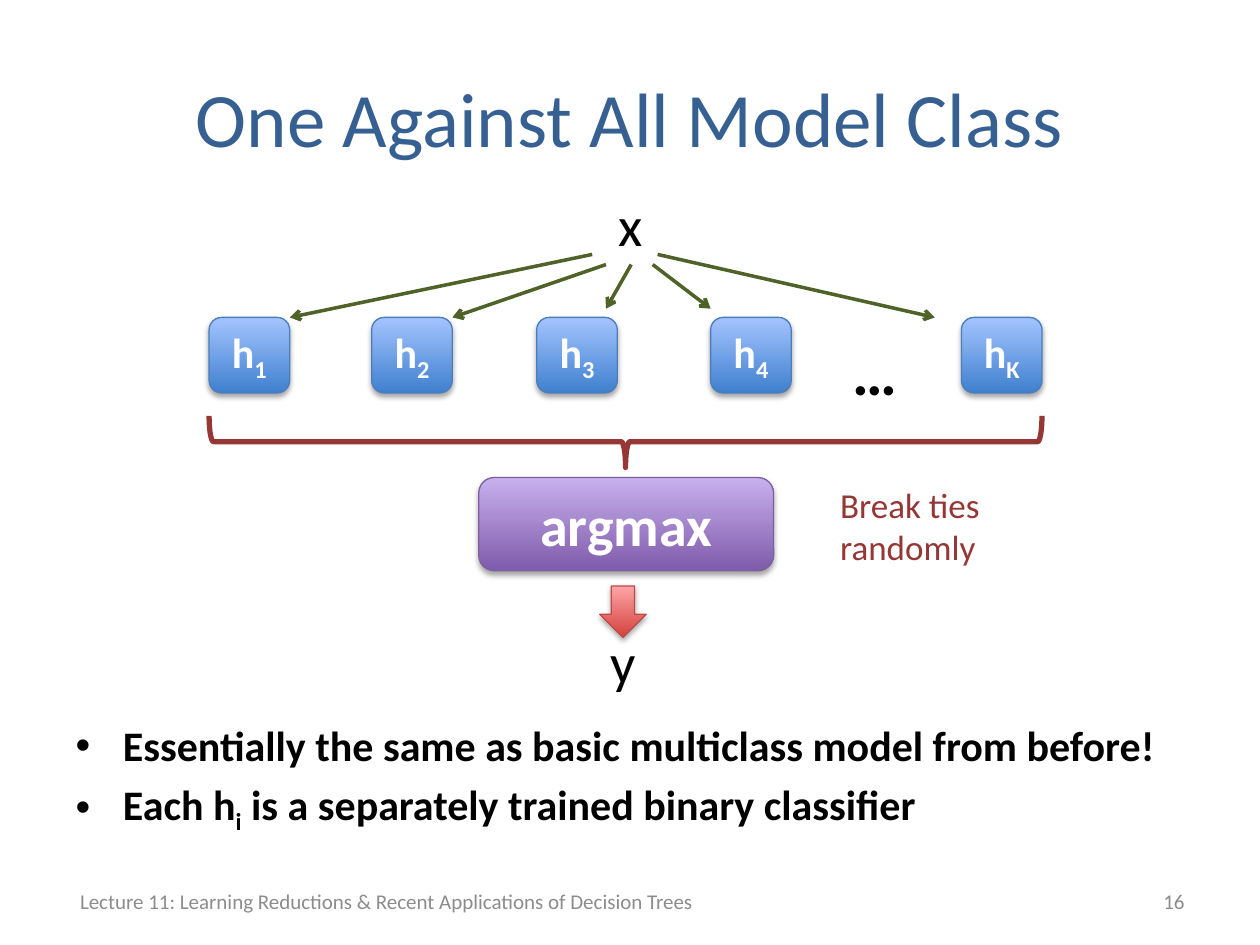
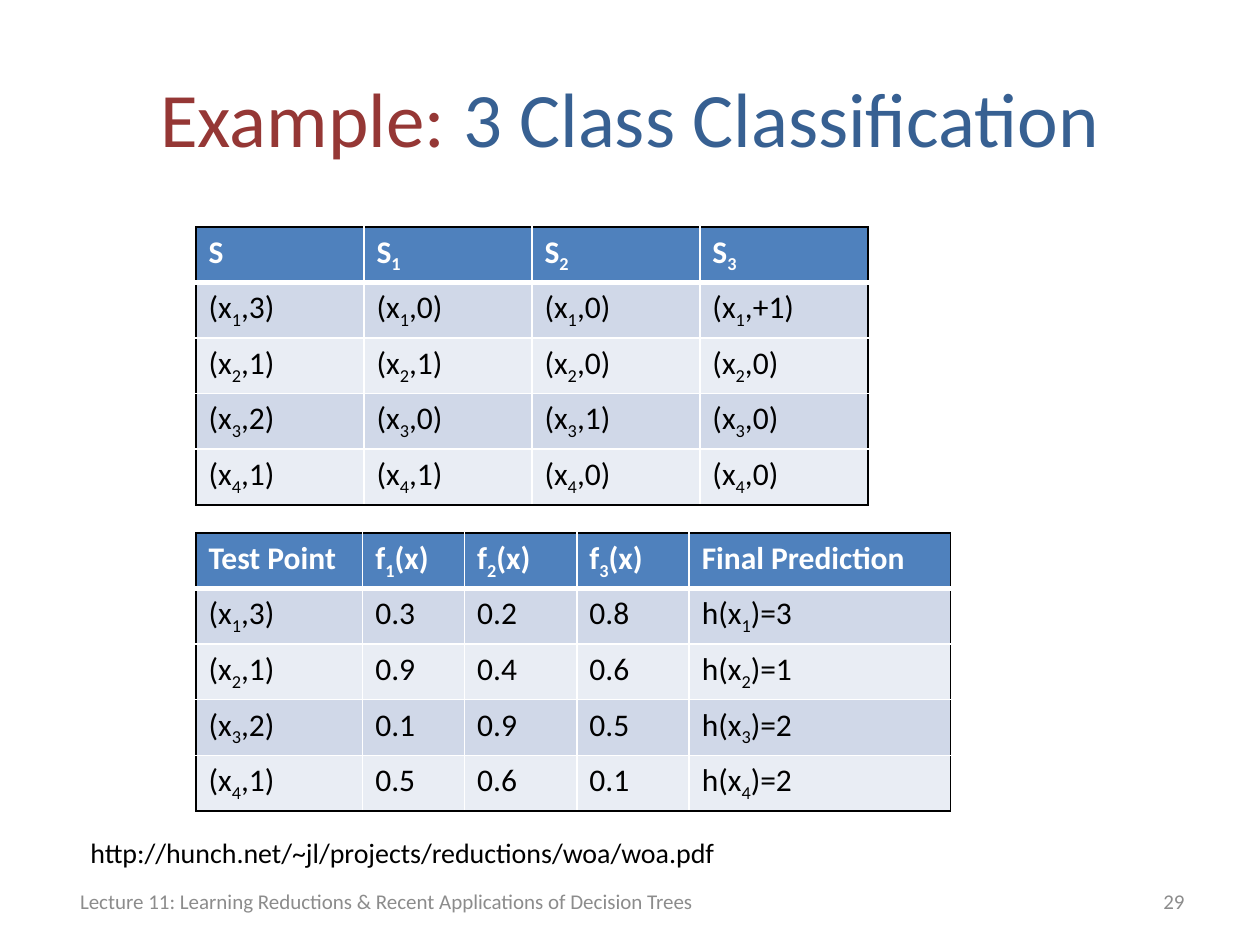
from lxml import etree
from pptx import Presentation
from pptx.dml.color import RGBColor
from pptx.enum import shapes, text
from pptx.oxml import parse_xml
from pptx.oxml.ns import nsdecls, qn
from pptx.util import Pt

FONT = "Calibri"
BLACK = RGBColor(0x00, 0x00, 0x00)
WHITE = RGBColor(0xFF, 0xFF, 0xFF)
TITLE_BLUE = RGBColor(0x37, 0x60, 0x92)
DARK_RED = RGBColor(0x95, 0x37, 0x35)
GREEN = RGBColor(0x4F, 0x62, 0x28)
GREY = RGBColor(0x8C, 0x8C, 0x8C)
HEADER_BLUE = RGBColor(0x4F, 0x81, 0xBD)
BANDS = RGBColor(0xD0, 0xD8, 0xE8), RGBColor(0xE9, 0xED, 0xF4)
# Glossy styles: bottom colour, top colour, outline
BLUE_GLOSS = RGBColor(0x3F, 0x80, 0xCE), RGBColor(0xA4, 0xC4, 0xFF), RGBColor(0x4B, 0x7E, 0xBC)
PURPLE_GLOSS = RGBColor(0x7F, 0x5B, 0xAB), RGBColor(0xC8, 0xB0, 0xED), RGBColor(0x7D, 0x60, 0xA0)
RED_GLOSS = RGBColor(0xD1, 0x40, 0x3C), RGBColor(0xFF, 0xA6, 0xA5), RGBColor(0xBF, 0x4C, 0x48)
FOOTER = "Lecture 11: Learning Reductions & Recent Applications of Decision Trees"
LEFT, CENTER, RIGHT = text.PP_ALIGN.LEFT, text.PP_ALIGN.CENTER, text.PP_ALIGN.RIGHT


def write(text_frame, markup, size, color, bold=False, alignment=LEFT):
    """Fill a text frame; the character after each underscore is a subscript."""
    text_frame.text = markup
    for paragraph in text_frame.paragraphs:
        paragraph.alignment = alignment
        start, *pieces = paragraph.text.split("_")
        paragraph.text = start
        for piece in pieces:
            subscript = paragraph.add_run()
            subscript.text = piece[0]
            subscript.font._element.set("baseline", "-25000")
            if piece[1:]:
                paragraph.add_run().text = piece[1:]
        for run in paragraph.runs:
            run.font.name, run.font.size, run.font.bold = FONT, Pt(size), bold
            run.font.color.rgb = color


presentation = Presentation()
presentation.slide_width, presentation.slide_height = Pt(720), Pt(540)
model_slide = presentation.slides.add_slide(presentation.slide_layouts[1])
example_slide = presentation.slides.add_slide(presentation.slide_layouts[5])

# Titles
for slide, parts in (
    (model_slide, [("One Against All Model Class", TITLE_BLUE)]),
    (example_slide, [("Example: ", DARK_RED), ("3 Class Classification", TITLE_BLUE)]),
):
    title = slide.shapes.title
    title.left, title.top, title.width, title.height = Pt(36), Pt(21.6), Pt(648), Pt(90)
    title.text_frame.vertical_anchor = text.MSO_ANCHOR.MIDDLE
    paragraph = title.text_frame.paragraphs[0]
    paragraph.alignment = CENTER
    for words, color in parts:
        run = paragraph.add_run()
        run.text = words
        run.font.name, run.font.size, run.font.color.rgb = FONT, Pt(44), color

# Bullet list
body = model_slide.placeholders[1]
body.left, body.top, body.width, body.height = Pt(36), Pt(407.5), Pt(648), Pt(77)
write(body.text_frame,
      "Essentially the same as basic multiclass model from before!\n"
      "Each h_i is a separately trained binary classifier", 24, BLACK, True)
for paragraph, space in zip(body.text_frame.paragraphs, (0, 4.8)):
    paragraph.space_before = Pt(space)

# Classifier boxes, argmax box and result arrow
ROUNDED = shapes.MSO_SHAPE.ROUNDED_RECTANGLE
classifiers = zip("1234K", (119.5, 212.4, 306.7, 406.1, 549.4))
glossy_shapes = [(ROUNDED, (left, 181.4, 46.1, 43.2), BLUE_GLOSS, f"h_{index}", 24)
                 for index, left in classifiers]
glossy_shapes += [
    (ROUNDED, (273.6, 272.9, 168.5, 53.3), PURPLE_GLOSS, "argmax", 32),
    (shapes.MSO_SHAPE.DOWN_ARROW, (342.7, 334.8, 26.6, 29.5), RED_GLOSS, "", 18),
]
for kind, box, (bottom_color, top_color, outline), label, size in glossy_shapes:
    shape = model_slide.shapes.add_shape(kind, *map(Pt, box))
    shape.fill.gradient()
    shape.fill.gradient_angle = 90
    for stop, color, position in zip(shape.fill.gradient_stops, (bottom_color, top_color), (0, 1)):
        stop.color.rgb, stop.position = color, position
    shape.line.color.rgb, shape.line.width = outline, Pt(0.75)
    shape.shadow.inherit = False
    shape._element.spPr.find(qn("a:effectLst")).append(parse_xml(
        f'<a:outerShdw {nsdecls("a")} blurRad="40000" dist="23000" dir="5400000" rotWithShape="0">'
        '<a:srgbClr val="000000"><a:alpha val="35000"/></a:srgbClr></a:outerShdw>'))
    if label:
        shape.text_frame.vertical_anchor = text.MSO_ANCHOR.MIDDLE
        write(shape.text_frame, label, size, WHITE, True, CENTER)

# Brace gathering the classifiers
brace = model_slide.shapes.add_shape(
    shapes.MSO_SHAPE.LEFT_BRACE, Pt(342.7), Pt(14.4), Pt(29.5), Pt(475.9))
brace.rotation = 270
brace.fill.background()
brace.line.color.rgb, brace.line.width = DARK_RED, Pt(3)
brace.shadow.inherit = False

# Arrows from x to the classifiers
for ends in (
    (338.4, 145.4, 165.6, 181.4),
    (346.3, 151.2, 258.5, 181.4),
    (360.7, 151.2, 346.3, 176.4),
    (373, 151.2, 406.1, 176.4),
    (375.8, 145.4, 534.2, 181.4),
):
    arrow = model_slide.shapes.add_connector(shapes.MSO_CONNECTOR.STRAIGHT, *map(Pt, ends))
    arrow.line.color.rgb, arrow.line.width = GREEN, Pt(2)
    etree.SubElement(arrow.line._get_or_add_ln(), qn("a:tailEnd"), type="arrow")
    etree.SubElement(arrow._element.spPr, qn("a:effectLst"))

# Labels
for slide, words, box, size, color, bold in (
    (model_slide, "…", (480.2, 186.5, 40.3, 51.1), 36, BLACK, True),
    (model_slide, "x", (346.3, 105.1, 29.5, 46.1), 32, BLACK, False),
    (model_slide, "y", (342, 355, 29.5, 46.1), 32, BLACK, False),
    (model_slide, "Break ties\nrandomly", (473, 272.9, 200, 55.4), 20, DARK_RED, False),
    (example_slide, "http://hunch.net/~jl/projects/reductions/woa/woa.pdf",
     (44.6, 473.8, 377.3, 26.6), 16, BLACK, False),
):
    label = slide.shapes.add_textbox(*map(Pt, box))
    label.text_frame.word_wrap = "\n" in words
    label.text_frame.auto_size = text.MSO_AUTO_SIZE.SHAPE_TO_FIT_TEXT
    write(label.text_frame, words, size, color, bold)

# Footers and slide numbers
for slide, number in ((model_slide, "16"), (example_slide, "29")):
    for words, left, width, alignment in ((FOOTER, 36, 370, CENTER), (number, 516.2, 167.8, RIGHT)):
        footer = slide.shapes.add_textbox(Pt(left), Pt(500.4), Pt(width), Pt(28.8))
        footer.text_frame.word_wrap = True
        footer.text_frame.vertical_anchor = text.MSO_ANCHOR.MIDDLE
        write(footer.text_frame, words, 12, GREY, alignment=alignment)

# Tables: training sets and predictions
training_rows = [
    ("S", "S_1", "S_2", "S_3"),
    ("(x_1,3)", "(x_1,0)", "(x_1,0)", "(x_1,+1)"),
    ("(x_2,1)", "(x_2,1)", "(x_2,0)", "(x_2,0)"),
    ("(x_3,2)", "(x_3,0)", "(x_3,1)", "(x_3,0)"),
    ("(x_4,1)", "(x_4,1)", "(x_4,0)", "(x_4,0)"),
]
prediction_rows = [
    ("Test Point", "f_1(x)", "f_2(x)", "f_3(x)", "Final Prediction"),
    ("(x_1,3)", "0.3", "0.2", "0.8", "h(x_1)=3"),
    ("(x_2,1)", "0.9", "0.4", "0.6", "h(x_2)=1"),
    ("(x_3,2)", "0.1", "0.9", "0.5", "h(x_3)=2"),
    ("(x_4,1)", "0.5", "0.6", "0.1", "h(x_4)=2"),
]
for rows, top, widths in (
    (prediction_rows, 304.5, (95.3, 58.2, 64.2, 64.2, 149.4)),
    (training_rows, 129.6, (96, 96, 96, 96)),
):
    frame = example_slide.shapes.add_table(
        len(rows), len(widths), Pt(112), Pt(top), Pt(sum(widths)), Pt(29.2 * len(rows)))
    table = frame.table
    table.horz_banding = False
    for column, width in zip(table.columns, widths):
        column.width = Pt(width)
    for row, values in enumerate(rows):
        for column, value in enumerate(values):
            cell = table.cell(row, column)
            header = row == 0
            write(cell.text_frame, value, 18, WHITE if header else BLACK, header)
            # Black outer edge, white inner lines, thick line under the header
            for side, outer in (("L", column == 0), ("R", column == len(widths) - 1),
                                ("T", header), ("B", row == len(rows) - 1)):
                points = 3 if header and side == "B" else 1
                cell._tc.get_or_add_tcPr().append(parse_xml(
                    f'<a:ln{side} {nsdecls("a")} w="{Pt(points)}"><a:solidFill>'
                    f'<a:srgbClr val="{BLACK if outer else WHITE}"/></a:solidFill></a:ln{side}>'))
            cell.fill.solid()
            cell.fill.fore_color.rgb = HEADER_BLUE if header else BANDS[(row - 1) % 2]

presentation.save("out.pptx")
